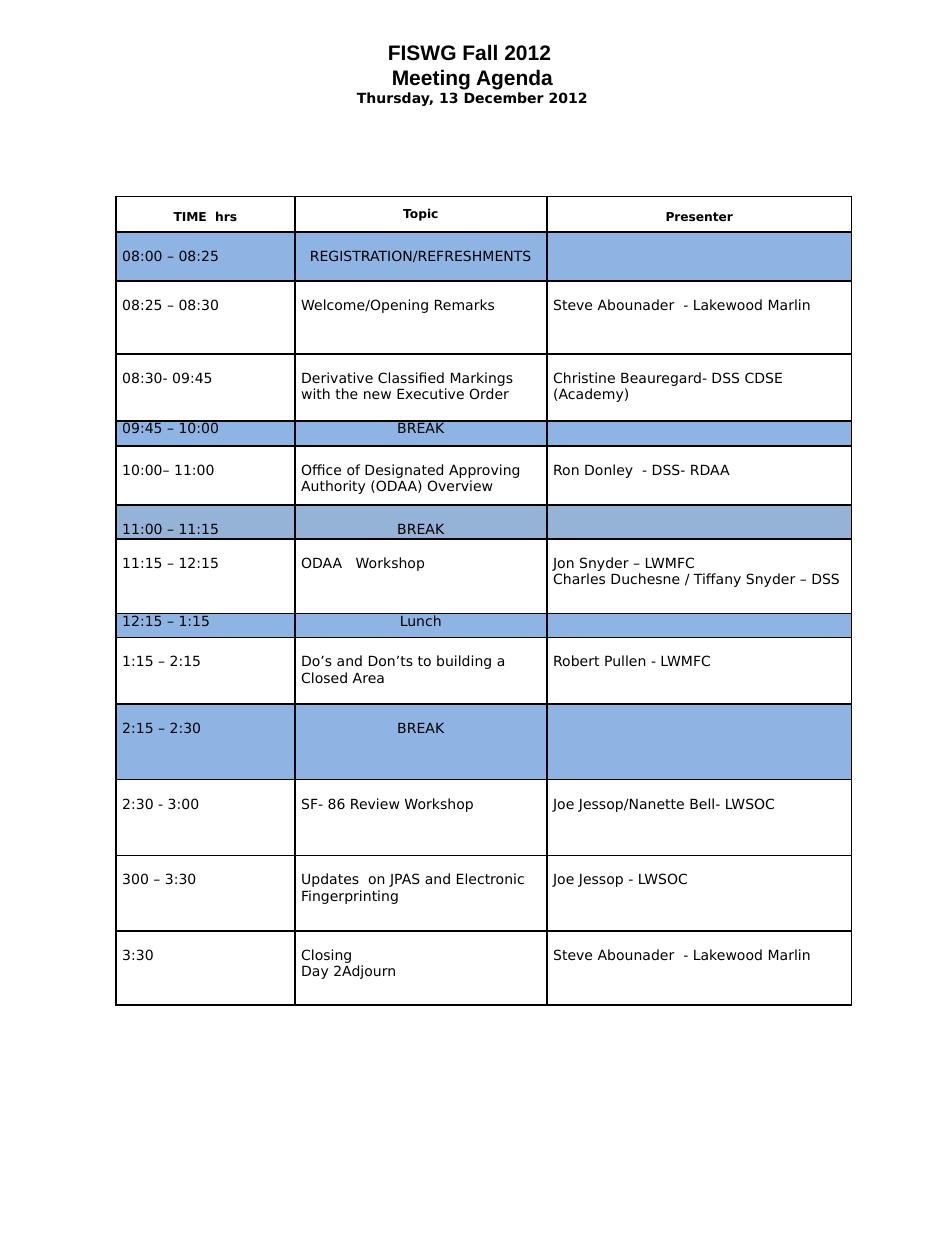
from dataclasses import dataclass

from lxml.etree import SubElement
from pptx import Presentation
from pptx.dml.color import RGBColor
from pptx.enum.text import MSO_ANCHOR, MSO_AUTO_SIZE, PP_ALIGN
from pptx.oxml.ns import qn
from pptx.util import Inches, Pt


@dataclass(frozen=True)
class Theme:
    ink: RGBColor = RGBColor(0, 0, 0)
    pause: RGBColor = RGBColor(0x8E, 0xB4, 0xE3)
    muted_pause: RGBColor = RGBColor(0x95, 0xB3, 0xD7)
    heading_font: str = "Arial"
    body_font: str = "DejaVu Sans"
    heading: int = 12
    body: int = 8
    label: int = 7
    border: int = 1


THEME = Theme()
HEADING = [
    ("FISWG Fall 2012 ", THEME.heading_font, THEME.heading),
    ("Meeting Agenda", THEME.heading_font, THEME.heading),
    ("Thursday, 13 December 2012", THEME.body_font, THEME.body),
]
COLUMNS = [("TIME  hrs", 1.42), ("Topic", 2), ("Presenter", 2.42)]
HEADER_HEIGHT, HEADER_DROP = 0.28, 0.11
DROP = 0.13

SESSIONS = [
    (0.39, DROP, THEME.pause, "08:00 – 08:25", "REGISTRATION/REFRESHMENTS", ""),
    (0.58, DROP, None, "08:25 – 08:30", "Welcome/Opening Remarks",
     "Steve Abounader  - Lakewood Marlin"),
    (0.53, DROP, None, "08:30- 09:45",
     "Derivative Classified Markings with the new Executive Order",
     "Christine Beauregard- DSS CDSE (Academy)"),
    (0.2, 0, THEME.pause, "09:45 – 10:00", "BREAK", ""),
    (0.47, DROP, None, "10:00– 11:00",
     "Office of Designated Approving Authority (ODAA) Overview",
     "Ron Donley  - DSS- RDAA"),
    (0.27, DROP, THEME.muted_pause, "11:00 – 11:15", "BREAK", ""),
    (0.59, DROP, None, "11:15 – 12:15", "ODAA   Workshop",
     "Jon Snyder – LWMFC\nCharles Duchesne / Tiffany Snyder – DSS"),
    (0.19, 0, THEME.pause, "12:15 – 1:15", "Lunch", ""),
    (0.53, DROP, None, "1:15 – 2:15", "Do’s and Don’ts to building a Closed Area",
     "Robert Pullen - LWMFC"),
    (0.6, DROP, THEME.pause, "2:15 – 2:30", "BREAK", ""),
    (0.6, DROP, None, "2:30 - 3:00", "SF- 86 Review Workshop",
     "Joe Jessop/Nanette Bell- LWSOC"),
    (0.6, DROP, None, "300 – 3:30", "Updates  on JPAS and Electronic Fingerprinting",
     "Joe Jessop - LWSOC"),
    (0.59, DROP, None, "3:30", "Closing\nDay 2Adjourn",
     "Steve Abounader  - Lakewood Marlin"),
]


def apply(target, values):
    for name, value in values.items():
        setattr(target, name, value)


def write(paragraph, words, font, size, bold, align):
    paragraph.alignment = align
    if not words:
        SubElement(paragraph._p, qn("a:endParaRPr"), sz=str(size * 100))
        return
    run = paragraph.add_run()
    run.text = words
    apply(run.font, {"name": font, "size": Pt(size), "bold": bold})
    run.font.color.rgb = THEME.ink


def draw_borders(cell):
    properties = cell._tc.get_or_add_tcPr()
    for side in ("a:lnL", "a:lnR", "a:lnT", "a:lnB"):
        line = SubElement(properties, qn(side), w=str(Pt(THEME.border)))
        SubElement(SubElement(line, qn("a:solidFill")), qn("a:srgbClr"),
                   val=str(THEME.ink))


def fill_cell(cell, words, drop, fill, size, bold, align, anchor=MSO_ANCHOR.TOP):
    apply(cell, {"margin_left": Inches(0.05), "margin_right": Inches(0.05),
                 "margin_top": Inches(drop), "margin_bottom": 0,
                 "vertical_anchor": anchor})
    draw_borders(cell)
    if fill is None:
        cell.fill.background()
    else:
        cell.fill.solid()
        cell.fill.fore_color.rgb = fill
    frame = cell.text_frame
    for index, line in enumerate(words.split("\n")):
        paragraph = frame.add_paragraph() if index else frame.paragraphs[0]
        write(paragraph, line, THEME.body_font, size, bold, align)


def add_heading(slide, width):
    heading = slide.shapes.title
    apply(heading, {"left": 0, "top": Inches(0.24), "width": width,
                    "height": Inches(0.94)})
    frame = heading.text_frame
    apply(frame, {"word_wrap": True, "auto_size": MSO_AUTO_SIZE.NONE,
                  "vertical_anchor": MSO_ANCHOR.TOP, "margin_top": Inches(0.07)})
    for index, (words, font, size) in enumerate(HEADING):
        paragraph = frame.add_paragraph() if index else frame.paragraphs[0]
        write(paragraph, words, font, size, True, PP_ALIGN.CENTER)


def add_agenda(slide):
    heights = [HEADER_HEIGHT] + [session[0] for session in SESSIONS]
    widths = [width for _, width in COLUMNS]
    agenda = slide.shapes.add_table(
        len(heights), len(widths), Inches(0.92), Inches(1.56),
        Inches(sum(widths)), Inches(sum(heights))).table
    apply(agenda, {"first_row": False, "horz_banding": False})
    for column, width in zip(agenda.columns, widths):
        column.width = Inches(width)
    for row, height in zip(agenda.rows, heights):
        row.height = Inches(height)

    for column, (label, _) in enumerate(COLUMNS):
        middle = label == "Topic"
        fill_cell(agenda.cell(0, column), label, 0 if middle else HEADER_DROP, None,
                  THEME.label, True, PP_ALIGN.CENTER,
                  MSO_ANCHOR.MIDDLE if middle else MSO_ANCHOR.TOP)
    for row, (_, drop, fill, *entries) in enumerate(SESSIONS, 1):
        for column, words in enumerate(entries):
            centred = fill is not None and column == 1
            fill_cell(agenda.cell(row, column), words, drop if words else 0, fill,
                      THEME.body, False,
                      PP_ALIGN.CENTER if centred else PP_ALIGN.LEFT)


def main():
    deck = Presentation()
    apply(deck, {"slide_width": Inches(7.5), "slide_height": Inches(10)})
    slide = deck.slides.add_slide(deck.slide_layouts[5])
    add_heading(slide, deck.slide_width)
    add_agenda(slide)
    deck.save("out.pptx")


if __name__ == "__main__":
    main()
